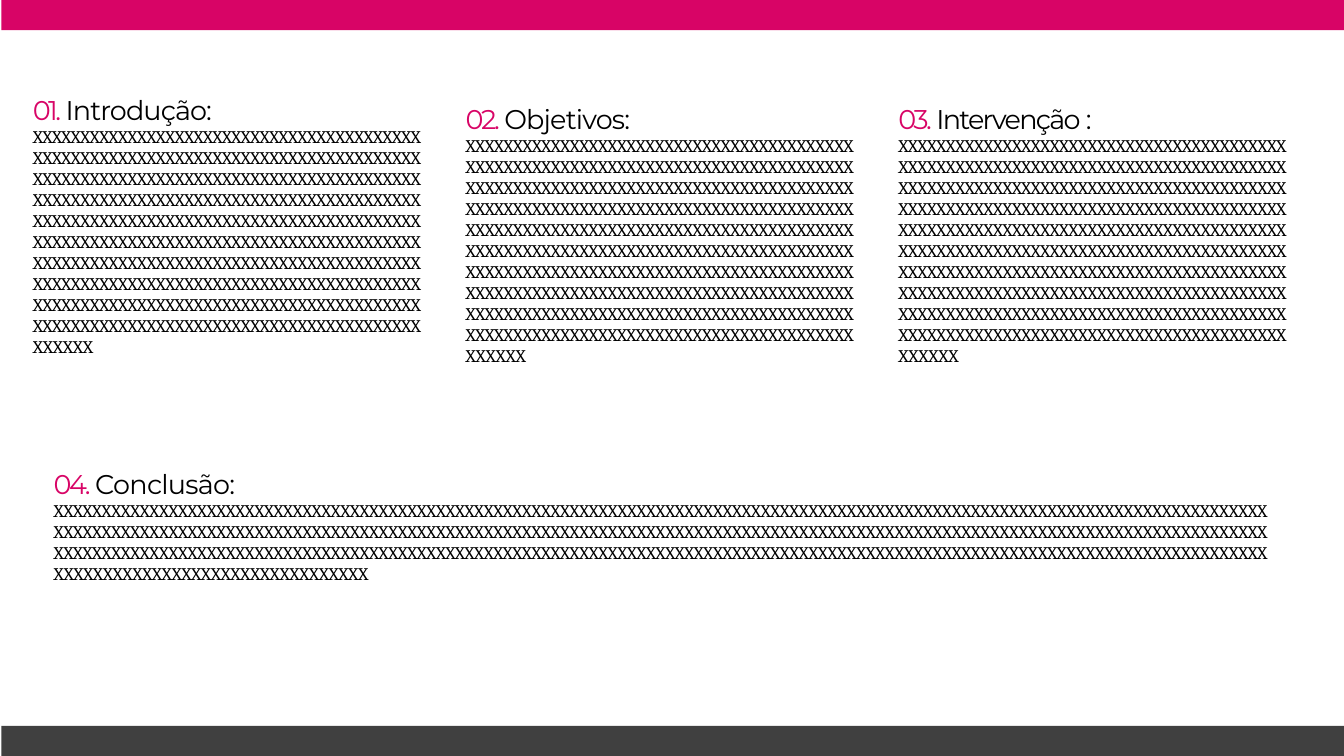
import pptx
import pptx.dml.color
import pptx.enum.shapes
import pptx.enum.text
import pptx.util

Inches = pptx.util.Inches
Pt = pptx.util.Pt
PINK, GREY, BLACK = "D80466", "404040", "000000"


def color(code):
    return pptx.dml.color.RGBColor.from_string(code)


def add_run(para, text, font, size, code, space):
    """Add a run; space is the letter spacing in points."""
    run = para.add_run()
    run.text = text
    style = {"name": font, "size": Pt(size)}
    for key, value in style.items():
        setattr(run.font, key, value)
    run.font.color.rgb = color(code)
    run._r.get_or_add_rPr().set("spc", str(round(space * 100)))


deck = pptx.Presentation()
deck.slide_width, deck.slide_height = Inches(20), Inches(11.25)
slide = deck.slides.add_slide(deck.slide_layouts[6])

# Top and bottom bands
for top, code in ((0, PINK), (10.8, GREY)):
    band = slide.shapes.add_shape(
        pptx.enum.shapes.MSO_SHAPE.RECTANGLE,
        Inches(0.02), Inches(top), Inches(19.98), Inches(0.45))
    band.shadow.inherit = False
    band.fill.solid()
    band.fill.fore_color.rgb = color(code)
    band.line.fill.background()

# Filler text: full lines, their length, their spacing, rest, its spacing
short = (10, 41, -0.7, 6, -0.1)
long = (3, 127, -0.6, 32, -0.3)

# Place, title runs with their spacing, filler
parts = [
    ((0.48, 1.38, 5.91, 3.93), [("Introdução:", -1)], short),
    ((6.92, 1.51, 5.91, 3.93), [("Objetivos:", -0.9)], short),
    ((13.36, 1.51, 5.91, 3.93), [("Intervenção ", -1.9), (":", -0.5)], short),
    ((0.79, 6.95, 18.4, 1.74), [("Conclusão:", -0.8)], long),
]
frame_style = {
    "word_wrap": True,
    "auto_size": pptx.enum.text.MSO_AUTO_SIZE.SHAPE_TO_FIT_TEXT,
    "margin_left": Inches(0.01),
    "margin_top": Inches(0.02),
    "margin_right": 0,
    "margin_bottom": 0,
}
body_style = {
    "alignment": pptx.enum.text.PP_ALIGN.JUSTIFY,
    "line_spacing": Pt(22.5),
    "space_before": Pt(0.2),
}

for num, (place, title, filler) in enumerate(parts, 1):
    box = slide.shapes.add_textbox(*map(Inches, place))
    frame = box.text_frame
    for key, value in frame_style.items():
        setattr(frame, key, value)

    head = frame.paragraphs[0]
    head.line_spacing = Pt(34)
    add_run(head, f"{num:02}. ", "Montserrat", 29, PINK, -2.8)
    for text, space in title:
        add_run(head, text, "Montserrat", 29, BLACK, space)

    body = frame.add_paragraph()
    for key, value in body_style.items():
        setattr(body, key, value)
    lines, width, space, rest, rest_space = filler
    add_run(body, ("X" * width + " ") * lines, "Cambria", 19, BLACK, space)
    add_run(body, "X" * rest, "Cambria", 19, BLACK, rest_space)

deck.save("out.pptx")
